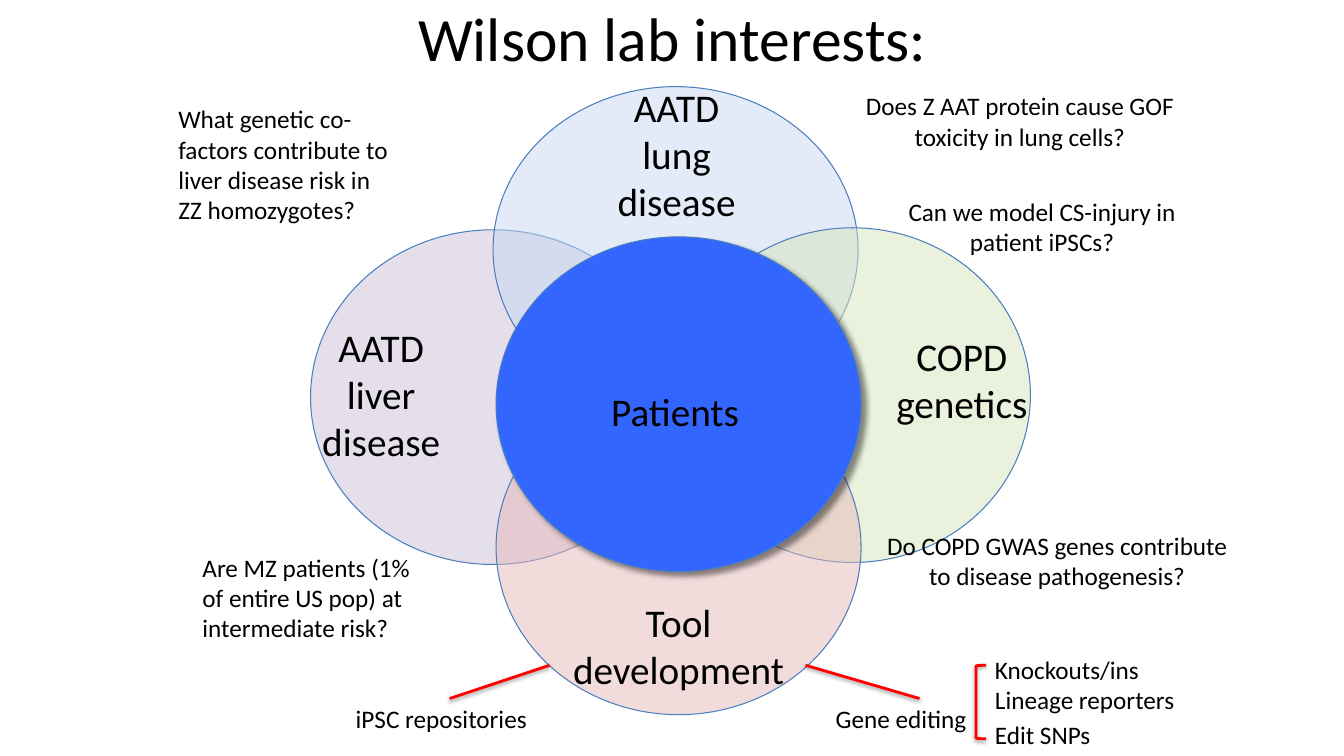
"""Build the slide of lab interests as overlapping circles around the patients."""
from dataclasses import dataclass
from typing import Optional

from lxml import etree
from pptx import Presentation
from pptx.dml.color import RGBColor
from pptx.enum.shapes import MSO_CONNECTOR, MSO_SHAPE
from pptx.enum.text import MSO_ANCHOR, MSO_AUTO_SIZE, PP_ALIGN
from pptx.oxml.ns import qn
from pptx.slide import Slide
from pptx.text.text import TextFrame
from pptx.util import Emu, Pt

ELLIPSE = MSO_SHAPE.OVAL
LEFT_BRACKET = MSO_SHAPE.LEFT_BRACKET
STRAIGHT = MSO_CONNECTOR.STRAIGHT
MIDDLE = MSO_ANCHOR.MIDDLE
GROW = MSO_AUTO_SIZE.SHAPE_TO_FIT_TEXT
LEFT = PP_ALIGN.LEFT
CENTER = PP_ALIGN.CENTER

EMU_PER_PX = 9144
TITLE_ONLY_LAYOUT = 5


@dataclass(frozen=True)
class Theme:
    font: str = "Calibri"
    title_size: int = 44
    label_size: int = 28
    note_size: int = 18
    text: str = "000000"
    outline: str = "4B7EBC"
    accent: str = "FF0000"
    patients: str = "3366FF"
    liver: str = "CCC1DA"
    lung: str = "C6D9F1"
    genetics: str = "D7E4BD"
    tools: str = "E6B9B8"
    outline_width: float = 0.75
    accent_width: float = 2


@dataclass(frozen=True)
class Box:
    left: int
    top: int
    width: int
    height: int

    def emu(self) -> tuple[Emu, Emu, Emu, Emu]:
        """Return the box in EMU."""
        return px(self.left), px(self.top), px(self.width), px(self.height)


@dataclass(frozen=True)
class Shadow:
    opacity: int
    blur: float
    distance: float
    angle: int


@dataclass(frozen=True)
class Circle:
    box: Box
    color: str
    label: str
    label_box: Box
    opacity: int = 50
    shadow: Optional[Shadow] = None
    label_fill: Optional[str] = None


@dataclass(frozen=True)
class Note:
    text: str
    box: Box
    alignment: PP_ALIGN = LEFT


@dataclass(frozen=True)
class Line:
    start: tuple[int, int]
    end: tuple[int, int]


THEME = Theme()
PATIENT_SHADOW = Shadow(43, 4, 4, 45)
ACCENT_SHADOW = Shadow(38, 3.1, 1.6, 90)
TITLE_BOX = Box(217, -26, 900, 125)
BRACKET_BOX = Box(968, 660, 10, 73)

CIRCLES = [
    Circle(Box(308, 228, 362, 332), THEME.liver, "AATD liver disease", Box(294, 316, 168, 151)),
    Circle(Box(489, 86, 362, 323), THEME.lung, "AATD lung disease", Box(595, 78, 152, 151)),
    Circle(Box(669, 226, 353, 332), THEME.genetics, "COPD genetics", Box(877, 325, 154, 104)),
    Circle(Box(492, 377, 362, 332), THEME.tools, "Tool development", Box(550, 589, 246, 104)),
    Circle(Box(492, 235, 362, 332), THEME.patients, "Patients", Box(545, 379, 249, 57),
           100, PATIENT_SHADOW, THEME.patients),
]

NOTES = [
    Note("Does Z AAT protein cause GOF toxicity in lung cells?", Box(832, 85, 359, 71), CENTER),
    Note("Can we model CS-injury in patient iPSCs?", Box(854, 190, 359, 71), CENTER),
    Note("Do COPD GWAS genes contribute to disease pathogenesis?", Box(869, 521, 359, 71), CENTER),
    Note("What genetic co-factors contribute to liver disease risk in ZZ homozygotes?",
         Box(167, 98, 236, 131)),
    Note("Are MZ patients (1% of entire US pop) at intermediate risk?", Box(191, 543, 236, 101)),
    Note("iPSC repositories", Box(343, 693, 207, 40)),
    Note("Gene editing", Box(819, 693, 207, 40)),
    Note("Knockouts/ins", Box(977, 644, 174, 40)),
    Note("Lineage reporters", Box(977, 674, 280, 40)),
    Note("Edit SNPs", Box(977, 709, 280, 40)),
]

LINES = [Line((446, 693), (545, 660)), Line((799, 660), (912, 693))]


def px(length: int) -> Emu:
    """Convert px to EMU."""
    return Emu(length * EMU_PER_PX)


def set_effects(shape, shadow: Optional[Shadow]) -> None:
    """Replace the theme's shadow by the given one or by none."""
    effects = etree.SubElement(shape._element.spPr, qn("a:effectLst"))
    if shadow:
        outer = etree.SubElement(
            effects, qn("a:outerShdw"), blurRad=str(Pt(shadow.blur)), dist=str(Pt(shadow.distance)),
            dir=str(shadow.angle * 60000), algn="ctr", rotWithShape="0")
        color = etree.SubElement(outer, qn("a:srgbClr"), val=THEME.text)
        etree.SubElement(color, qn("a:alpha"), val=str(shadow.opacity * 1000))


def set_line(shape, color: str, width: float) -> None:
    """Set the colour and width of an outline."""
    shape.line.color.rgb = RGBColor.from_string(color)
    shape.line.width = Pt(width)


def write_text(text_frame: TextFrame, text: str, size: int, alignment: PP_ALIGN) -> None:
    """Write one formatted paragraph."""
    text_frame.text = text
    text_frame.word_wrap = True
    paragraph = text_frame.paragraphs[0]
    paragraph.alignment = alignment
    font = paragraph.runs[0].font
    font.name = THEME.font
    font.size = Pt(size)
    font.color.rgb = RGBColor.from_string(THEME.text)


def add_text(slide: Slide, note: Note, size: int, fill: Optional[str] = None) -> None:
    """Add a text box that grows with its text."""
    shape = slide.shapes.add_textbox(*note.box.emu())
    write_text(shape.text_frame, note.text, size, note.alignment)
    shape.text_frame.auto_size = GROW
    if fill:
        shape.fill.solid()
        shape.fill.fore_color.rgb = RGBColor.from_string(fill)


def add_circle(slide: Slide, circle: Circle) -> None:
    """Add a circle and its label."""
    shape = slide.shapes.add_shape(ELLIPSE, *circle.box.emu())
    shape.fill.solid()
    shape.fill.fore_color.rgb = RGBColor.from_string(circle.color)
    if circle.opacity < 100:
        color = shape._element.spPr.find(qn("a:solidFill")).find(qn("a:srgbClr"))
        etree.SubElement(color, qn("a:alpha"), val=str(circle.opacity * 1000))
    set_line(shape, THEME.outline, THEME.outline_width)
    set_effects(shape, circle.shadow)
    add_text(slide, Note(circle.label, circle.label_box, CENTER), THEME.label_size, circle.label_fill)


def add_line(slide: Slide, line: Line) -> None:
    """Add an accent line with a shadow."""
    points = [px(value) for value in (*line.start, *line.end)]
    connector = slide.shapes.add_connector(STRAIGHT, *points)
    set_line(connector, THEME.accent, THEME.accent_width)
    set_effects(connector, ACCENT_SHADOW)


def add_bracket(slide: Slide, box: Box) -> None:
    """Add the bracket in front of the gene editing list."""
    shape = slide.shapes.add_shape(LEFT_BRACKET, *box.emu())
    shape.fill.background()
    set_line(shape, THEME.accent, THEME.accent_width)
    set_effects(shape, ACCENT_SHADOW)


def main() -> None:
    """Build and save the presentation."""
    presentation = Presentation()
    presentation.slide_width, presentation.slide_height = px(1333), px(750)
    slide = presentation.slides.add_slide(presentation.slide_layouts[TITLE_ONLY_LAYOUT])
    title = slide.shapes.title
    title.left, title.top, title.width, title.height = TITLE_BOX.emu()
    write_text(title.text_frame, "Wilson lab interests:", THEME.title_size, CENTER)
    title.text_frame.vertical_anchor = MIDDLE
    for circle in CIRCLES:
        add_circle(slide, circle)
    for note in NOTES:
        add_text(slide, note, THEME.note_size)
    for line in LINES:
        add_line(slide, line)
    add_bracket(slide, BRACKET_BOX)
    presentation.save("out.pptx")


if __name__ == "__main__":
    main()
